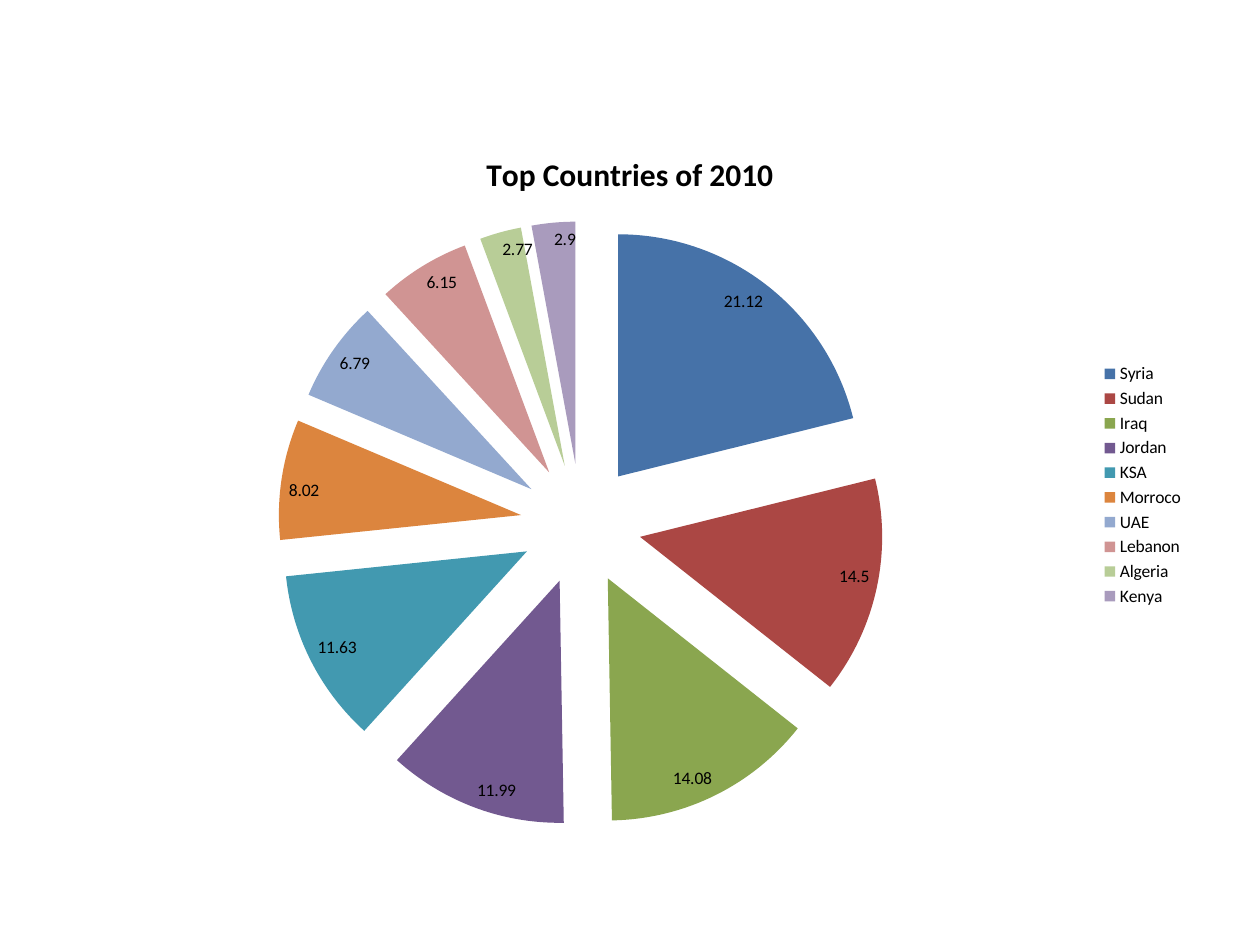
from lxml.etree import SubElement
from pptx import Presentation
from pptx.chart.data import CategoryChartData
from pptx.dml.color import RGBColor
from pptx.enum.chart import XL_CHART_TYPE, XL_LABEL_POSITION, XL_LEGEND_POSITION
from pptx.oxml.ns import qn
from pptx.util import Inches, Pt

COUNTRIES = [
    ("Syria", 21.12, "4672A8"),
    ("Sudan", 14.5, "AB4744"),
    ("Iraq", 14.08, "8AA64F"),
    ("Jordan", 11.99, "725990"),
    ("KSA", 11.63, "4299B0"),
    ("Morroco", 8.02, "DC853E"),
    ("UAE", 6.79, "93A9CF"),
    ("Lebanon", 6.15, "D09493"),
    ("Algeria", 2.77, "B8CD97"),
    ("Kenya", 2.9, "A99BBD"),
]


def color(value):
    return RGBColor.from_string(value)


def style_font(font, size, bold=False):
    font.name = "Calibri"
    font.size = Pt(size)
    font.bold = bold
    font.color.rgb = color("000000")


def explode(series, percent):
    ser = series._element
    explosion = SubElement(ser, qn("c:explosion"), val=str(percent))
    ser.find(qn("c:tx")).addnext(explosion)


def add_country_pie(s, x, y, w, h):
    data = CategoryChartData()
    data.categories = [name for name, _, _ in COUNTRIES]
    data.add_series("Series 1", [share for _, share, _ in COUNTRIES])
    chart = s.shapes.add_chart(
        XL_CHART_TYPE.PIE, Inches(x), Inches(y), Inches(w), Inches(h), data
    ).chart
    style_font(chart.font, 10)

    chart.has_title = True
    r = chart.chart_title.text_frame.paragraphs[0].add_run()
    r.text = "Top Countries of 2010"
    style_font(r.font, 18, bold=True)

    chart.has_legend = True
    chart.legend.position = XL_LEGEND_POSITION.RIGHT
    chart.legend.include_in_layout = False
    style_font(chart.legend.font, 10)

    plot = chart.plots[0]
    plot.vary_by_categories = True
    series = plot.series[0]
    explode(series, 25)
    for i, (_, _, fill) in enumerate(COUNTRIES):
        point = series.points[i].format
        point.fill.solid()
        point.fill.fore_color.rgb = color(fill)
        point.line.fill.background()

    plot.has_data_labels = True
    labels = plot.data_labels
    labels.show_value = True
    labels.show_percentage = False
    labels.position = XL_LABEL_POSITION.INSIDE_END
    style_font(labels.font, 10)


def main():
    prs = Presentation()
    prs.slide_width, prs.slide_height = Inches(10), Inches(7.5)
    s = prs.slides.add_slide(prs.slide_layouts[6])
    add_country_pie(s, 0.5, 1, 9, 5.7)
    prs.save("out.pptx")


if __name__ == "__main__":
    main()
